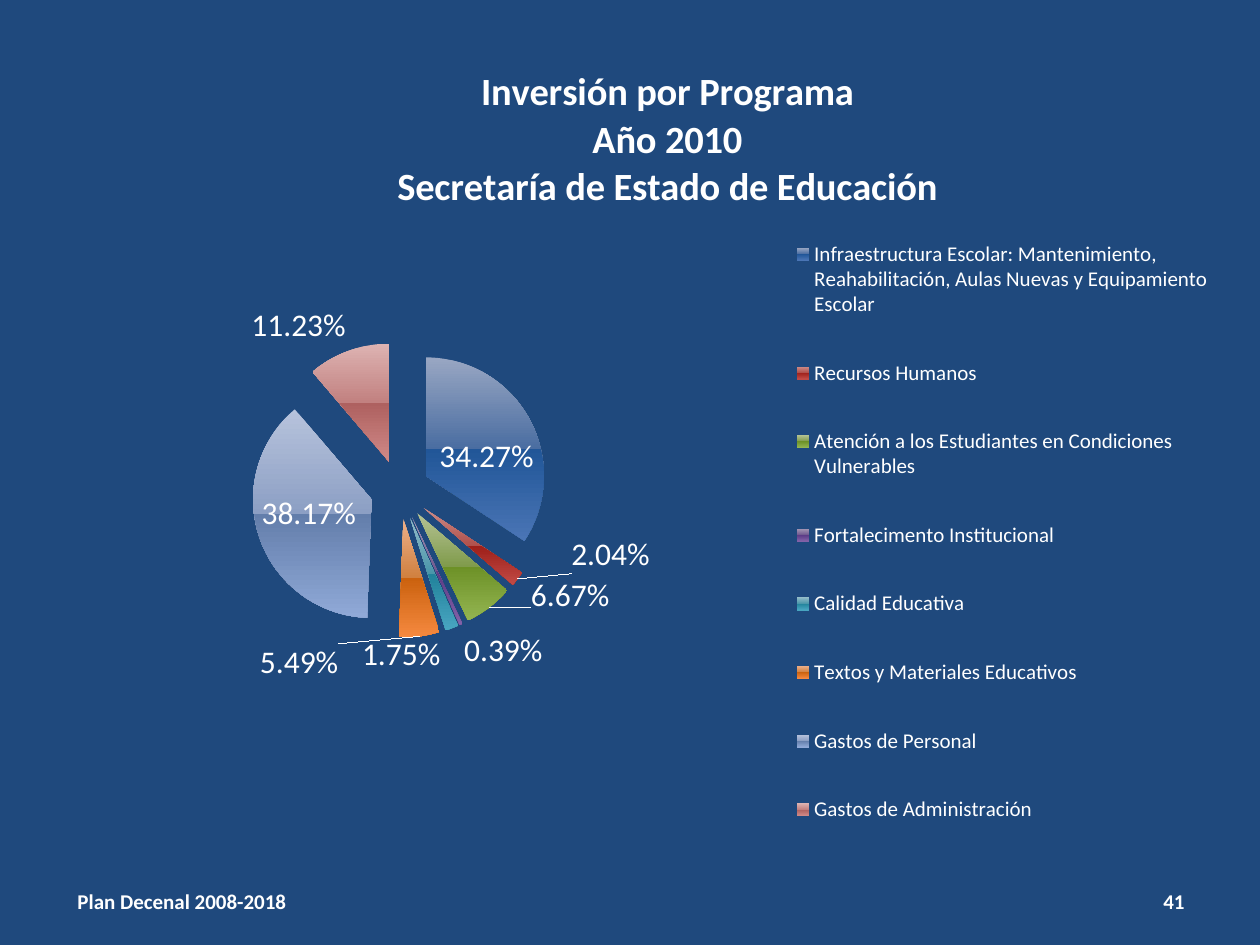
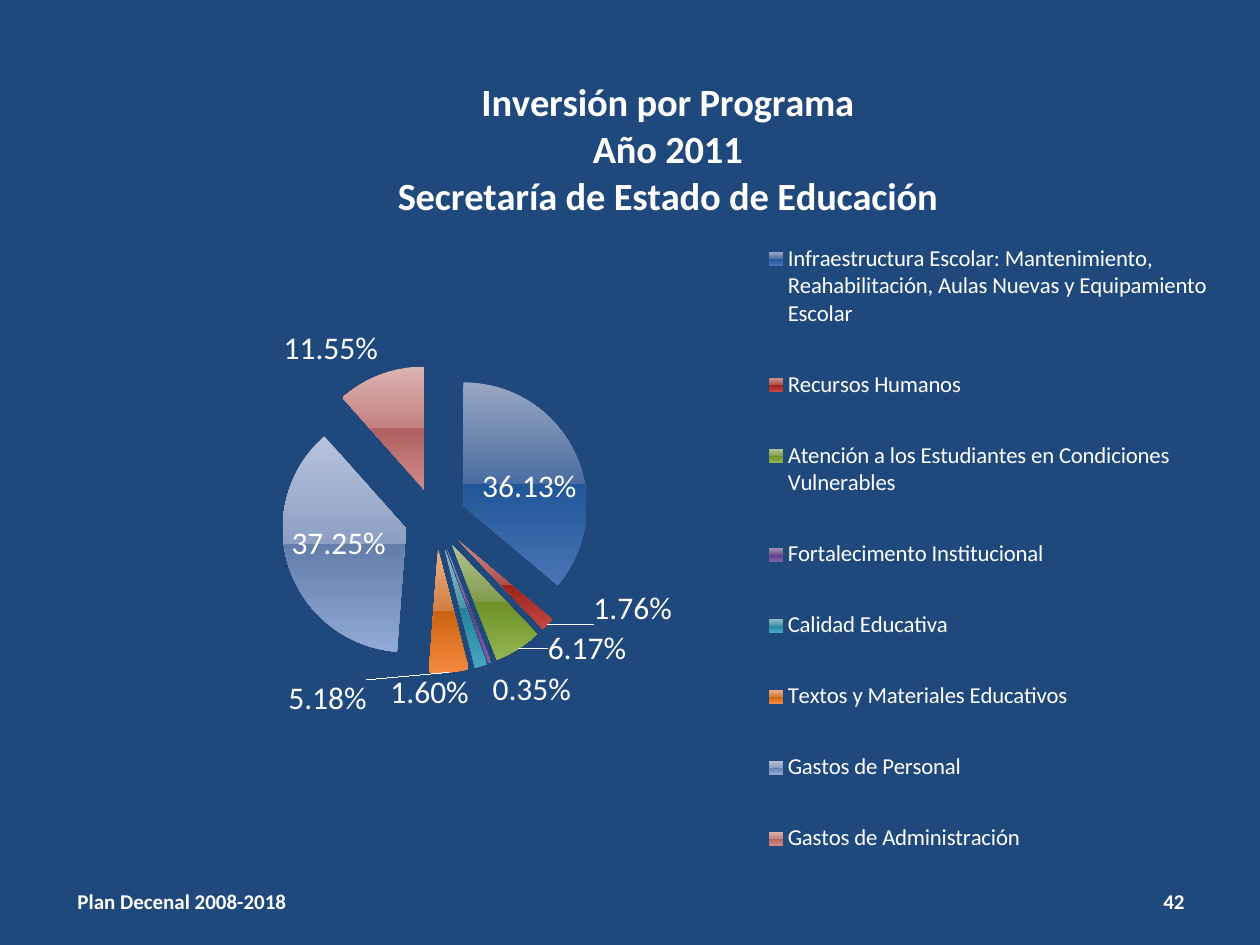
from dataclasses import dataclass

from lxml.etree import SubElement
from pptx import Presentation
from pptx.chart.data import CategoryChartData
from pptx.dml.color import RGBColor
from pptx.enum.chart import XL_CHART_TYPE, XL_LABEL_POSITION, XL_LEGEND_POSITION
from pptx.enum.text import MSO_ANCHOR, PP_ALIGN
from pptx.oxml import parse_xml
from pptx.oxml.ns import nsdecls, qn
from pptx.util import Pt

# Content
FOOTER = "Plan Decenal 2008-2018"
PROGRAMS = [
    "Infraestructura Escolar: Mantenimiento, Reahabilitación, Aulas Nuevas y Equipamiento Escolar",
    "Recursos Humanos",
    "Atención a los Estudiantes en Condiciones Vulnerables",
    "Fortalecimento Institucional",
    "Calidad Educativa",
    "Textos y Materiales Educativos",
    "Gastos de Personal",
    "Gastos de Administración",
]
# Frames are in points; plot and legend areas are fractions of the chart
YEARS = [
    dict(year=2010, page=41, shares=[34.27, 2.04, 6.67, 0.39, 1.75, 5.49, 38.17, 11.23],
         frame=(22.3, 16.6, 675.4, 483.1), plot=(0.01, 0.37, 0.59, 0.35),
         legend=(0.64, 0.2, 0.35, 0.79), legend_size=12),
    dict(year=2011, page=42, shares=[36.13, 1.76, 6.17, 0.35, 1.6, 5.18, 37.25, 11.55],
         frame=(22.3, 22.3, 676.1, 489.6), plot=(0.03, 0.38, 0.61, 0.36),
         legend=(0.62, 0.19, 0.37, 0.81), legend_size=13),
]


@dataclass(frozen=True)
class Theme:
    font: str = "Calibri"
    background: RGBColor = RGBColor.from_string("1F497D")
    text: RGBColor = RGBColor.from_string("FFFFFF")
    title_size: int = 22
    label_size: int = 18
    footer_size: int = 12
    explosion: int = 25
    # Glossy slices: top, above the middle, below the middle, bottom
    slices: tuple = (
        ("99A7C3", "4A6DA1", "215698", "4A75B5"),
        ("CE8E8A", "B0504B", "9E201A", "C14A45"),
        ("B5C394", "809B4C", "6D9127", "93B551"),
        ("A497B5", "70588F", "5B3A86", "8262A8"),
        ("94BCC9", "4A96AA", "21829B", "48A5C0"),
        ("EDB08A", "D0803F", "CB620F", "F5893F"),
        ("B7C3DC", "8C9FC4", "637EAB", "90A9D7"),
        ("DDB3B2", "C28180", "AE6160", "D08987"),
    )


THEME = Theme()
STOPS = (0, 50, 50, 100)
TITLE_PLACE = (0.3, 0.04)
FOOTER_FRAME = (33.8, 500.4, 140.4, 28.8)
PAGE_FRAME = (516.2, 500.4, 167.8, 28.8)


def style(font, size, bold=False):
    font.name, font.size, font.bold = THEME.font, Pt(size), bold
    font.color.rgb = THEME.text


def add_footer(slide, text, frame, align):
    box = slide.shapes.add_textbox(*map(Pt, frame)).text_frame
    box.word_wrap = True
    box.vertical_anchor = MSO_ANCHOR.MIDDLE
    box.text = text
    box.paragraphs[0].alignment = align
    style(box.paragraphs[0].runs[0].font, THEME.footer_size, True)


def place(element, fractions, inner=False):
    """Give a chart part a manual layout: x, y and optionally width, height."""
    for old in element.findall(qn("c:layout")):
        element.remove(old)
    keys = ("x", "y", "w", "h")[:len(fractions)]
    settings = [("layoutTarget", "inner")] if inner else []
    settings += [(f"{key}Mode", "edge") for key in keys[:2]]
    settings += list(zip(keys, fractions))
    layout = parse_xml(f"<c:layout {nsdecls('c')}/>")
    manual = SubElement(layout, qn("c:manualLayout"))
    for tag, value in settings:
        SubElement(manual, qn(f"c:{tag}")).set("val", str(value))
    before = [child for child in element
              if child.tag in (qn("c:tx"), qn("c:legendPos"), qn("c:legendEntry"))]
    element.insert(len(before), layout)


def paint_slice(point, colors):
    stops = "".join(f'<a:gs pos="{stop * 1000}"><a:srgbClr val="{color}"/></a:gs>'
                    for stop, color in zip(STOPS, colors))
    properties = point.format.fill._xPr
    properties.insert(0, parse_xml(
        f'<a:gradFill {nsdecls("a")} rotWithShape="1"><a:gsLst>{stops}</a:gsLst>'
        '<a:lin ang="5400000" scaled="0"/></a:gradFill>'))


def add_title(chart, year):
    lines = ["Inversión por Programa", f"Año {year}", "Secretaría de Estado de Educación"]
    title = chart.chart_title
    title.text_frame.text = "\n".join(lines)
    for paragraph in title.text_frame.paragraphs:
        paragraph.alignment = PP_ALIGN.CENTER
        style(paragraph.runs[0].font, THEME.title_size, True)
    place(title._element, TITLE_PLACE)
    title.include_in_layout = False


def add_labels(plot):
    plot.has_data_labels = True
    labels = plot.data_labels
    labels.show_percentage, labels.show_value = True, False
    labels.number_format, labels.number_format_is_linked = "0.00%", False
    labels.position = XL_LABEL_POSITION.BEST_FIT
    style(labels.font, THEME.label_size)
    element = labels._element
    for old in element.findall(qn("c:showLeaderLines")):
        element.remove(old)
    SubElement(element, qn("c:showLeaderLines")).set("val", "1")
    element.append(parse_xml(
        f'<c:leaderLines {nsdecls("c", "a")}><c:spPr><a:ln w="9525"><a:solidFill>'
        f'<a:srgbClr val="{THEME.text}"/></a:solidFill></a:ln></c:spPr></c:leaderLines>'))
    # Labels belong to the series
    series = plot.series[0]._element
    series.insert(series.index(series.find(qn("c:cat"))), element)


def add_pie(slide, content):
    data = CategoryChartData(number_format="0.00")
    data.categories = PROGRAMS
    data.add_series("Series 1", content["shares"])
    chart = slide.shapes.add_chart(
        XL_CHART_TYPE.PIE, *map(Pt, content["frame"]), data).chart
    style(chart.font, THEME.label_size)
    add_title(chart, content["year"])

    # Slices
    plot = chart.plots[0]
    plot.vary_by_categories = True
    series = plot.series[0]
    for index, colors in enumerate(THEME.slices):
        paint_slice(series.points[index], colors)
    explosion = parse_xml(f'<c:explosion {nsdecls("c")} val="{THEME.explosion}"/>')
    series._element.insert(series._element.index(series._element.find(qn("c:dPt"))), explosion)
    add_labels(plot)
    place(chart._chartSpace.chart.plotArea, content["plot"], inner=True)

    # Legend
    chart.has_legend = True
    chart.legend.position = XL_LEGEND_POSITION.RIGHT
    chart.legend.include_in_layout = False
    style(chart.legend.font, content["legend_size"])
    place(chart.legend._element, content["legend"])


def main():
    deck = Presentation()
    deck.slide_width, deck.slide_height = Pt(720), Pt(540)
    background = deck.slide_master.background.fill
    background.solid()
    background.fore_color.rgb = THEME.background
    blank = deck.slide_layouts[6]
    for content in YEARS:
        slide = deck.slides.add_slide(blank)
        add_footer(slide, FOOTER, FOOTER_FRAME, PP_ALIGN.CENTER)
        add_footer(slide, str(content["page"]), PAGE_FRAME, PP_ALIGN.RIGHT)
        add_pie(slide, content)
    deck.save("out.pptx")


if __name__ == "__main__":
    main()
